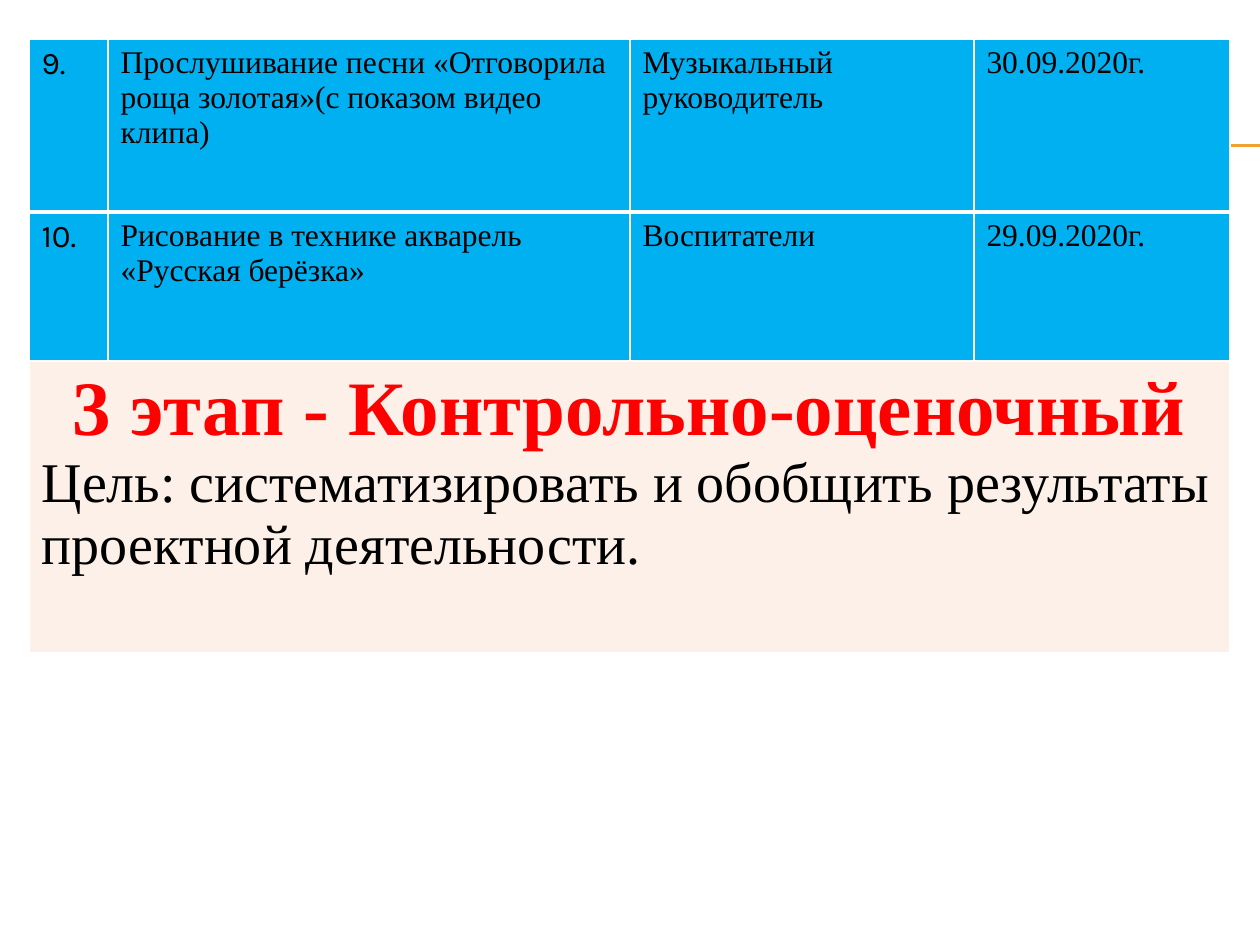
from lxml import etree
from pptx import Presentation
from pptx.dml.color import RGBColor
from pptx.enum.shapes import MSO_CONNECTOR
from pptx.enum.text import PP_ALIGN
from pptx.oxml.ns import qn
from pptx.util import Emu, Pt

STRAIGHT = MSO_CONNECTOR.STRAIGHT
CENTER = PP_ALIGN.CENTER

WHITE, BLACK, RED = "FFFFFF", "000000", "FF0000"
BLUE, CREAM, GOLD = "00B0F0", "FCF0E8", "F0A22E"
SERIF, SANS = "Times New Roman", "Karla"

EVENTS = [
    ["9.", "Прослушивание песни «Отговорила роща золотая»(с показом видео клипа)",
     "Музыкальный\nруководитель", "30.09.2020г."],
    ["10.", "Рисование в технике акварель «Русская берёзка»",
     "Воспитатели", "29.09.2020г."],
]
STAGE = "3 этап - Контрольно-оценочный"
GOAL = "Цель: систематизировать и обобщить результаты проектной деятельности."

COLUMN_WIDTHS = [79, 522, 344, 256]
ROW_HEIGHTS = [173, 149, 292]


def px(length):
    return Emu(round(length * 914400 / 126))


def color(hex_string):
    return RGBColor.from_string(hex_string)


class SlideBuilder:
    """Holds the current slide and draws its elements in one style."""

    def __init__(self, slide):
        self.slide = slide

    def line(self, x1, y1, x2, y2):
        line = self.slide.shapes.add_connector(STRAIGHT, px(x1), px(y1), px(x2), px(y2))
        line.line.color.rgb = color(GOLD)
        line.line.width = Pt(0.75)
        etree.SubElement(line._element.spPr, qn("a:effectLst"))

    def table(self, left, top, widths, heights):
        frame = self.slide.shapes.add_table(
            len(heights), len(widths), px(left), px(top), px(sum(widths)), px(sum(heights)))
        table = frame.table
        for column, width in zip(table.columns, widths):
            column.width = px(width)
        for row, height in zip(table.rows, heights):
            row.height = px(height)
        return table

    def borders(self, cell, **widths):
        """Draw white borders; the widths in points are keyed L, R, T and B."""
        properties = cell._tc.get_or_add_tcPr()
        for index, (side, width) in enumerate(widths.items()):
            border = etree.Element(qn(f"a:ln{side}"), w=str(Pt(width)))
            fill = etree.SubElement(border, qn("a:solidFill"))
            etree.SubElement(fill, qn("a:srgbClr"), val=WHITE)
            properties.insert(index, border)

    def fill(self, cell, hex_string):
        cell.fill.solid()
        cell.fill.fore_color.rgb = color(hex_string)

    def font(self, para, name, size, hex_string, bold=False):
        para.font.name = name
        para.font.size = Pt(size)
        para.font.color.rgb = color(hex_string)
        para.font.bold = bold


def main():
    deck = Presentation()
    deck.slide_width, deck.slide_height = px(1260), px(945)
    builder = SlideBuilder(deck.slides.add_slide(deck.slide_layouts[6]))

    for y in (145, 146):
        builder.line(71, y, 1260, y)

    table = builder.table(29, 39, COLUMN_WIDTHS, ROW_HEIGHTS)
    for row_index, row in enumerate(table.rows):
        top = 3 if row_index == 1 else 1
        bottom = 3 if row_index == 0 else 1
        for cell in row.cells:
            builder.fill(cell, BLUE if row_index < len(EVENTS) else CREAM)
            builder.borders(cell, L=1, R=1, T=top, B=bottom)

    for row_index, event in enumerate(EVENTS):
        for column_index, text in enumerate(event):
            frame = table.cell(row_index, column_index).text_frame
            frame.text = text
            for para in frame.paragraphs:
                builder.font(para, SERIF if column_index else SANS, 18, BLACK)

    stage_row = len(EVENTS)
    stage_cell = table.cell(stage_row, 0)
    stage_cell.merge(table.cell(stage_row, len(COLUMN_WIDTHS) - 1))
    stage_cell.text_frame.text = f"{STAGE}\n{GOAL}"
    heading, goal = stage_cell.text_frame.paragraphs
    heading.alignment = CENTER
    builder.font(heading, SERIF, 44, RED, bold=True)
    builder.font(goal, SERIF, 32, BLACK)

    deck.save("out.pptx")


if __name__ == "__main__":
    main()
